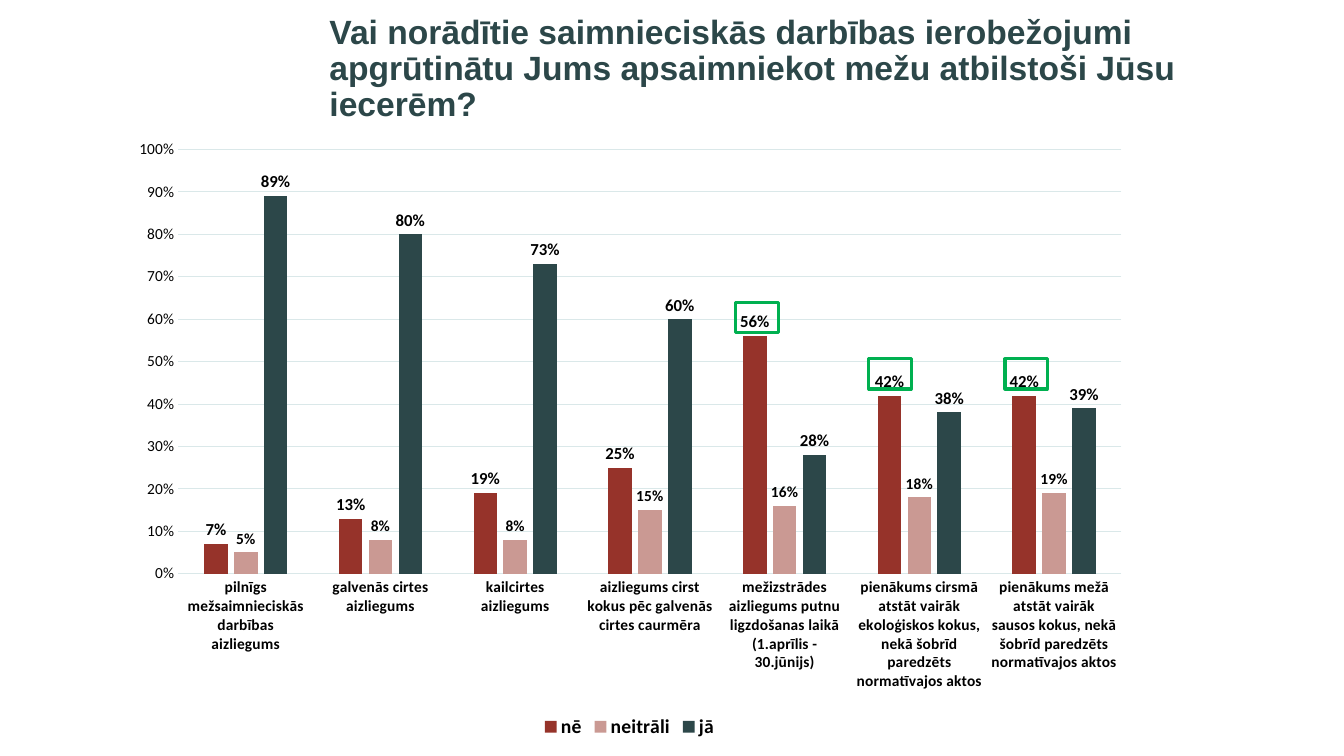
import pptx
import pptx.chart.data
import pptx.dml.color
import pptx.enum.chart
import pptx.enum.shapes
import pptx.enum.text
import pptx.oxml
import pptx.util

Pt = pptx.util.Pt
TITLE = ("Vai norādītie saimnieciskās darbības ierobežojumi apgrūtinātu Jums "
         "apsaimniekot mežu atbilstoši Jūsu iecerēm?")
CATEGORIES = [
    "pilnīgs mežsaimnieciskās darbības aizliegums",
    "galvenās cirtes aizliegums",
    "kailcirtes aizliegums",
    "aizliegums cirst kokus pēc galvenās cirtes caurmēra",
    "mežizstrādes aizliegums putnu ligzdošanas laikā (1.aprīlis - 30.jūnijs)",
    "pienākums cirsmā atstāt vairāk ekoloģiskos kokus, nekā šobrīd paredzēts normatīvajos aktos",
    "pienākums mežā atstāt vairāk sausos kokus, nekā šobrīd paredzēts normatīvajos aktos",
]
SERIES = [
    ("nē", "96332A", 12, (0.07, 0.13, 0.19, 0.25, 0.56, 0.42, 0.42)),
    ("neitrāli", "CA9993", 11, (0.05, 0.08, 0.08, 0.15, 0.16, 0.18, 0.19)),
    ("jā", "2C4749", 12, (0.89, 0.8, 0.73, 0.6, 0.28, 0.38, 0.39)),
]
PLOT_AREA = {"x": 0.06, "y": 0.035, "w": 0.92, "h": 0.69}
HIGHLIGHTS = [(620.64, 256.32), (717.84, 256.32), (525.6, 216)]
HIGHLIGHT_SIZE = (30.24, 21.6)
GRID = "DAE8E9"


def rgb(color):
    return pptx.dml.color.RGBColor.from_string(color)


def style_font(font, size, color="000000", bold=False, name="Calibri"):
    font.name, font.size, font.bold = name, Pt(size), bold
    font.color.rgb = rgb(color)


def style_line(line, color, width):
    line.color.rgb = rgb(color)
    line.width = Pt(width)


def add_title(slide):
    box = slide.shapes.add_textbox(Pt(228.24), Pt(7.92), Pt(719.28), Pt(83.52))
    tf = box.text_frame
    tf.word_wrap = True
    tf.vertical_anchor = pptx.enum.text.MSO_ANCHOR.MIDDLE
    p = tf.paragraphs[0]
    p.text = TITLE
    p.line_spacing = 0.9
    style_font(p.font, 24, "2C4749", True, "Arial")


def set_plot_area(chart):
    ns = "http://schemas.openxmlformats.org/drawingml/2006/chart"
    area = chart.plots[0]._element.getparent()
    for old in area.findall(f"{{{ns}}}layout"):
        area.remove(old)
    sizes = "".join(f'<c:{key} val="{val}"/>' for key, val in PLOT_AREA.items())
    area.insert(0, pptx.oxml.parse_xml(
        f'<c:layout xmlns:c="{ns}"><c:manualLayout><c:layoutTarget val="inner"/>'
        f'<c:xMode val="edge"/><c:yMode val="edge"/>{sizes}</c:manualLayout></c:layout>'))


def add_answers_chart(slide):
    data = pptx.chart.data.CategoryChartData(number_format="0%")
    data.categories = CATEGORIES
    for name, color, size, values in SERIES:
        data.add_series(name, values)
    chart = slide.shapes.add_chart(
        pptx.enum.chart.XL_CHART_TYPE.COLUMN_CLUSTERED,
        Pt(83.52), Pt(91.44), Pt(732.24), Pt(439.2), data).chart
    style_font(chart.font, 11)
    chart.has_title = False
    chart.has_legend = True
    chart.legend.position = pptx.enum.chart.XL_LEGEND_POSITION.BOTTOM
    chart.legend.include_in_layout = False
    style_font(chart.legend.font, 14, bold=True)

    for axis in (chart.category_axis, chart.value_axis):
        axis.major_tick_mark = axis.minor_tick_mark = pptx.enum.chart.XL_TICK_MARK.NONE
    style_font(chart.category_axis.tick_labels.font, 11, bold=True)
    style_line(chart.category_axis.format.line, GRID, 0.75)
    axis = chart.value_axis
    axis.minimum_scale, axis.maximum_scale, axis.major_unit = 0, 1, 0.1
    axis.tick_labels.number_format = "0%"
    axis.tick_labels.number_format_is_linked = False
    style_font(axis.tick_labels.font, 11)
    axis.format.line.fill.background()
    style_line(axis.major_gridlines.format.line, GRID, 0.75)

    plot = chart.plots[0]
    plot.gap_width, plot.overlap, plot.vary_by_categories = 219, -27, False
    for series, (name, color, size, values) in zip(plot.series, SERIES):
        series.format.fill.solid()
        series.format.fill.fore_color.rgb = rgb(color)
        series.invert_if_negative = False
        labels = series.data_labels
        labels.show_value = True
        labels.number_format = "0%"
        labels.number_format_is_linked = False
        labels.position = pptx.enum.chart.XL_LABEL_POSITION.OUTSIDE_END
        style_font(labels.font, size, bold=True)
    set_plot_area(chart)


def add_highlights(slide):
    for left, top in HIGHLIGHTS:
        sp = slide.shapes.add_shape(
            pptx.enum.shapes.MSO_SHAPE.RECTANGLE,
            Pt(left), Pt(top), *map(Pt, HIGHLIGHT_SIZE))
        sp.shadow.inherit = False
        sp.fill.background()
        style_line(sp.line, "00B050", 2.25)


def main():
    prs = pptx.Presentation()
    prs.slide_width, prs.slide_height = Pt(960), Pt(540)
    slide = prs.slides.add_slide(prs.slide_layouts[6])
    add_title(slide)
    add_answers_chart(slide)
    add_highlights(slide)
    prs.save("out.pptx")


if __name__ == "__main__":
    main()
